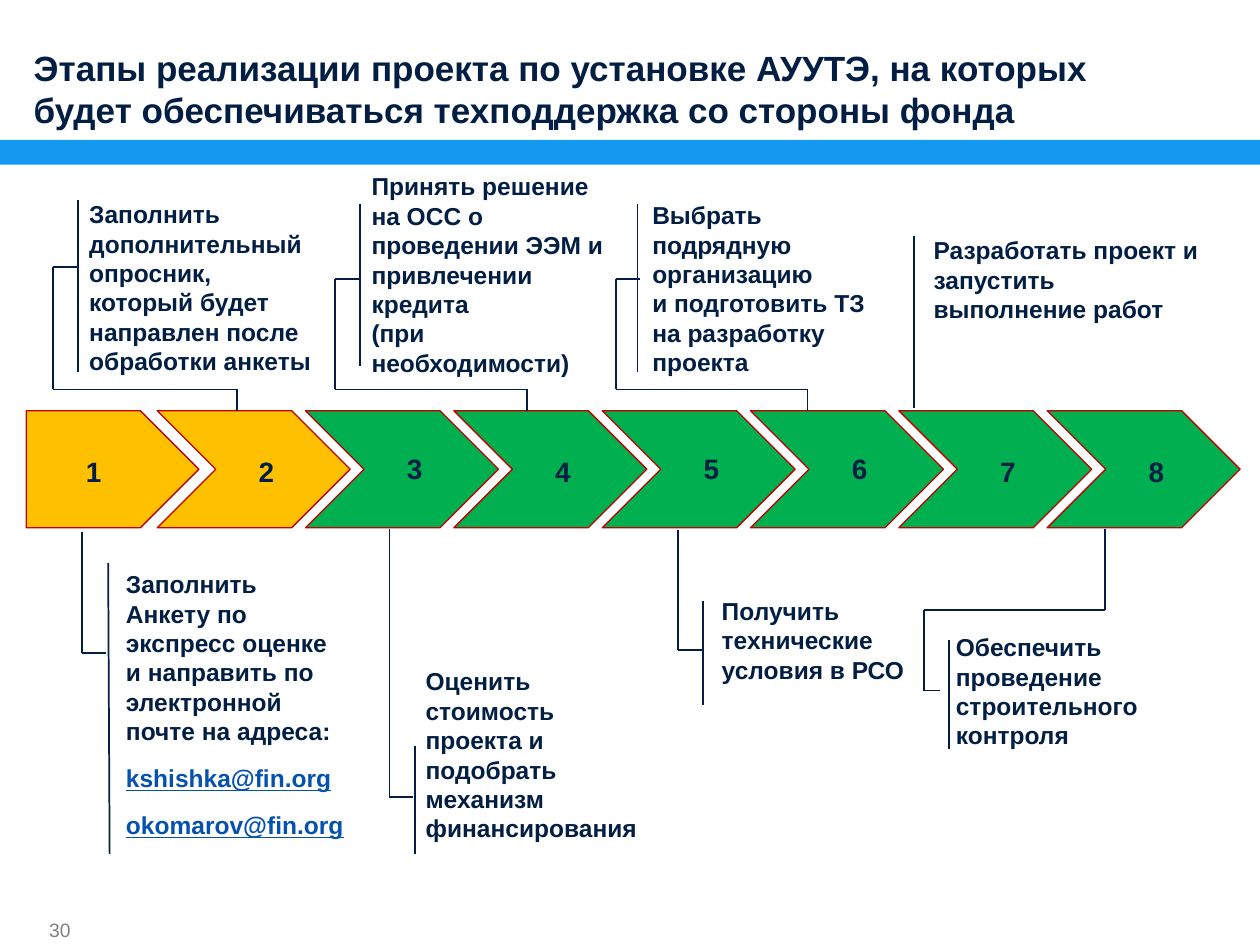
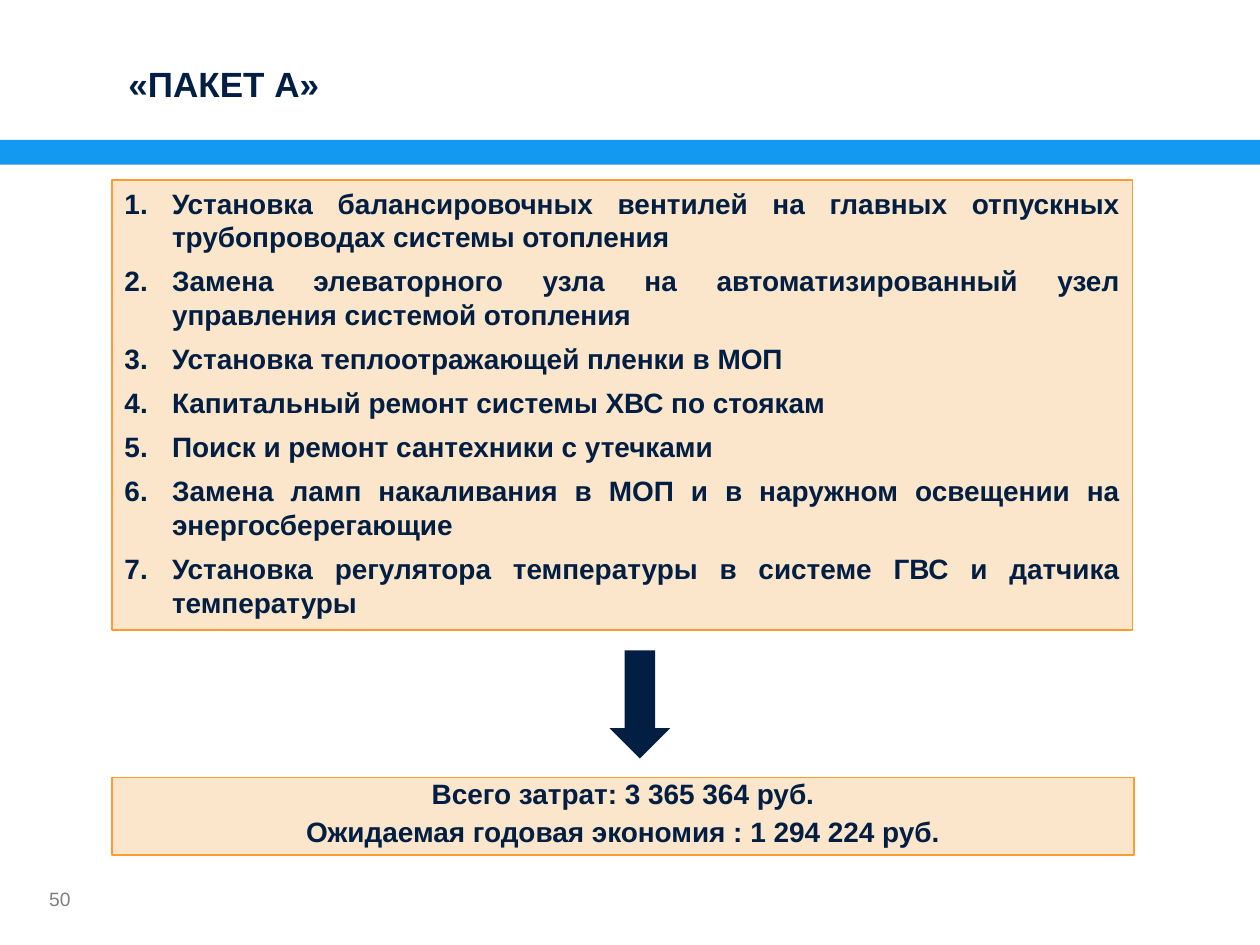
from lxml import etree
from pptx import Presentation
from pptx.dml.color import RGBColor
from pptx.enum.shapes import MSO_CONNECTOR, MSO_SHAPE
from pptx.enum.text import MSO_ANCHOR, PP_ALIGN
from pptx.oxml.ns import qn
from pptx.util import Cm, Pt

NAVY = RGBColor(0x02, 0x1F, 0x43)
BLUE = RGBColor(0x13, 0x9A, 0xF0)
LINK_BLUE = RGBColor(0x05, 0x51, 0xAE)
GRAY = RGBColor(0x7F, 0x7F, 0x7F)
AMBER = RGBColor(0xFF, 0xC0, 0x00)
GREEN = RGBColor(0x00, 0xB0, 0x50)
RED = RGBColor(0xC0, 0x00, 0x00)
PEACH = RGBColor(0xFB, 0xE6, 0xCB)
ORANGE = RGBColor(0xFF, 0x99, 0x33)

RECTANGLE = MSO_SHAPE.RECTANGLE
PENTAGON = MSO_SHAPE.PENTAGON
CHEVRON = MSO_SHAPE.CHEVRON
DOWN_ARROW = MSO_SHAPE.DOWN_ARROW
STRAIGHT = MSO_CONNECTOR.STRAIGHT
LEFT, CENTER, JUSTIFY = PP_ALIGN.LEFT, PP_ALIGN.CENTER, PP_ALIGN.JUSTIFY
TOP, MIDDLE = MSO_ANCHOR.TOP, MSO_ANCHOR.MIDDLE

FONT = "Arial"
STEP_COUNT = 8
STEP_PITCH = 2.99
STEP_TOP = 8.28
STEP_HEIGHT = 2.36
RAISED_NUMBERS = (3, 5, 6)

CALLOUT_TEXTS = [
    ((1.55, 3.89, 5.13, 3.84),
     ["Заполнить дополнительный опросник, который будет направлен после обработки анкеты"]),
    ((7.24, 3.33, 5.31, 4.45),
     ["Принять решение на ОСС о проведении ЭЭМ и привлечении кредита", "(при необходимости)"]),
    ((12.9, 3.91, 5.28, 3.84),
     ["Выбрать подрядную организацию", "и подготовить ТЗ на разработку проекта"]),
    ((18.57, 4.62, 5.97, 2.06), ["Разработать проект и запустить выполнение работ"]),
    ((8.33, 13.31, 4.95, 3.84),
     ["Оценить стоимость проекта и подобрать механизм финансирования"]),
    ((14.3, 11.89, 4.7, 2.06), ["Получить технические условия в РСО"]),
    ((19.02, 12.62, 5.66, 2.64), ["Обеспечить проведение строительного контроля"]),
]

FORM_BOX = (2.29, 11.35, 4.96, 5.77)
FORM_TEXT = "Заполнить Анкету по экспресс оценке и направить по электронной почте на адреса:"
FORM_ADDRESSES = ["kshishka@fin.org", "okomarov@fin.org"]

UPPER_ELBOWS = [(4.78, 1.07, 5.38, 1.57), (10.63, 6.76, 5.63, 7.26), (16.28, 12.42, 5.63, 12.9)]
LOWER_ELBOWS = [(1.65, 10.72, 13.16), (7.85, 10.67, 16.07), (13.67, 10.69, 13.11)]
LAST_STEP_ROUTE = [(22.28, 10.67), (22.28, 12.29), (18.63, 12.29), (18.63, 13.92), (18.95, 13.92)]
TEXT_BARS = [
    (1.57, 4.04, 7.49), (7.26, 4.11, 7.37), (12.85, 4.11, 7.49), (18.42, 4.75, 8.23),
    (8.36, 15.04, 17.22), (14.17, 12.12, 14.22), (19.13, 12.9, 15.09),
]

MEASURES = [
    "Установка балансировочных вентилей на главных отпускных трубопроводах системы отопления",
    "Замена элеваторного узла на автоматизированный узел управления системой отопления",
    "Установка теплоотражающей пленки в МОП",
    "Капитальный ремонт системы ХВС по стоякам",
    "Поиск и ремонт сантехники с утечками",
    "Замена ламп накаливания в МОП и в наружном освещении на энергосберегающие",
    "Установка регулятора температуры в системе ГВС и датчика температуры",
]
TOTALS = ["Всего затрат: 3 365 364 руб.", "Ожидаемая годовая экономия : 1 294 224 руб."]


def write_text(frame, text, size=14, color=NAVY, bold=True, underline=None, align=LEFT,
               before=0, after=0, line_spacing=None, hanging=0, numbered=False):
    """Append one formatted paragraph to a text frame."""
    is_first = not frame.paragraphs[0].runs
    paragraph = frame.paragraphs[0] if is_first else frame.add_paragraph()
    paragraph.alignment = align
    paragraph.space_before = Pt(0 if is_first else before)
    paragraph.space_after = Pt(after)
    if line_spacing:
        paragraph.line_spacing = line_spacing
    properties = paragraph._p.get_or_add_pPr()
    if hanging:
        properties.set("marL", str(Cm(hanging)))
        properties.set("indent", str(-Cm(hanging)))
    if numbered:
        etree.SubElement(properties, qn("a:buFont"), typeface="+mj-lt")
        etree.SubElement(properties, qn("a:buAutoNum"), type="arabicPeriod")
    run = paragraph.add_run()
    run.text = text
    run.font.name = FONT
    run.font.size = Pt(size)
    run.font.bold = bold
    run.font.underline = underline
    run.font.color.rgb = color


class Deck:
    """Hold the presentation style and draw elements on the current slide."""

    def __init__(self):
        """Start an empty 4:3 presentation."""
        self.presentation = Presentation()
        self.presentation.slide_width = Cm(25.4)
        self.presentation.slide_height = Cm(19.05)
        self.slide = None

    def start_slide(self, title, title_box, number, number_top):
        """Add a slide with its band, title and page number."""
        self.slide = self.presentation.slides.add_slide(self.presentation.slide_layouts[6])
        self.shape(RECTANGLE, (0, 2.82, 25.4, 0.5), BLUE)
        write_text(self.text_box(title_box), title, size=20)
        footer = self.text_box((0.99, number_top, 1.52, 0.99), margin=0, anchor=MIDDLE)
        write_text(footer, number, size=11, color=GRAY, bold=False)

    def shape(self, kind, box, fill, outline=None):
        """Draw a filled preset shape and return its text frame."""
        shape = self.slide.shapes.add_shape(kind, *map(Cm, box))
        shape.shadow.inherit = False
        shape.fill.solid()
        shape.fill.fore_color.rgb = fill
        if outline:
            shape.line.color.rgb = outline
            shape.line.width = Pt(0.75)
        else:
            shape.line.fill.background()
        frame = shape.text_frame
        frame.word_wrap = True
        frame.vertical_anchor = TOP
        return frame

    def text_box(self, box, margin=None, anchor=TOP):
        """Add a wrapping text box and return its text frame."""
        frame = self.slide.shapes.add_textbox(*map(Cm, box)).text_frame
        frame.word_wrap = True
        frame.vertical_anchor = anchor
        if margin is not None:
            frame.margin_left = frame.margin_right = Cm(margin)
            frame.margin_top = frame.margin_bottom = Cm(margin)
        return frame

    def route(self, *points):
        """Join successive points with straight connectors."""
        for start, end in zip(points, points[1:]):
            connector = self.slide.shapes.add_connector(STRAIGHT, *map(Cm, start + end))
            connector.line.color.rgb = NAVY
            connector.line.width = Pt(1)
            etree.SubElement(connector._element.spPr, qn("a:effectLst"))

    def step(self, number):
        """Draw one numbered arrow of the process chain."""
        if number == 1:
            kind, left, width, label_left = PENTAGON, 0.53, 3.48, 1.24
        else:
            offset = STEP_PITCH * (number - 2)
            kind, left, width, label_left = CHEVRON, 3.17 + offset, 3.89, 4.72 + offset
        fill = AMBER if number <= 2 else GREEN
        self.shape(kind, (left, STEP_TOP, width, STEP_HEIGHT), fill, RED)
        label_top = 8.97 if number in RAISED_NUMBERS else 9.04
        label = self.text_box((label_left, label_top, 1.3, 0.94))
        write_text(label, str(number), size=16, align=CENTER)


def build_stages(deck):
    """Build the slide with the eight project stages."""
    deck.start_slide(
        "Этапы реализации проекта по установке АУУТЭ, на которых "
        "будет обеспечиваться техподдержка со стороны фонда",
        (0.43, 0.81, 22.86, 1.96), "30", 18.24)
    for number in range(1, STEP_COUNT + 1):
        deck.step(number)

    for box, paragraphs in CALLOUT_TEXTS:
        frame = deck.text_box(box)
        for text in paragraphs:
            write_text(frame, text)
    form = deck.text_box(FORM_BOX)
    write_text(form, FORM_TEXT, after=10)
    for address in FORM_ADDRESSES:
        write_text(form, address, color=LINK_BLUE, underline=True, after=10)

    for step_x, left, bar_y, bar_x in UPPER_ELBOWS:
        deck.route((step_x, STEP_TOP), (step_x, 7.85), (left, 7.85), (left, bar_y), (bar_x, bar_y))
    for left, top, bottom in LOWER_ELBOWS:
        deck.route((left, top), (left, bottom), (left + 0.48, bottom))
    deck.route(*LAST_STEP_ROUTE)
    for left, top, bottom in TEXT_BARS:
        deck.route((left, top), (left, bottom))
    deck.route((2.18, 11.35), (2.21, 17.22))


def build_package(deck):
    """Build the slide with the package measures and totals."""
    deck.start_slide("«ПАКЕТ А»", (2.34, 1.14, 20.73, 1.12), "50", 17.63)
    measures = deck.shape(RECTANGLE, (2.26, 3.63, 20.57, 9.07), PEACH, ORANGE)
    for text in MEASURES:
        write_text(measures, text, size=16, align=JUSTIFY, before=6, hanging=0.96, numbered=True)
    deck.shape(DOWN_ARROW, (12.29, 13.11, 1.22, 2.18), NAVY)
    totals = deck.shape(RECTANGLE, (2.26, 15.67, 20.6, 1.57), PEACH, ORANGE)
    for text in TOTALS:
        write_text(totals, text, size=16, align=CENTER, before=6, line_spacing=0.8, hanging=0.48)


def main():
    """Build and save the presentation."""
    deck = Deck()
    build_stages(deck)
    build_package(deck)
    deck.presentation.save("out.pptx")


if __name__ == "__main__":
    main()
